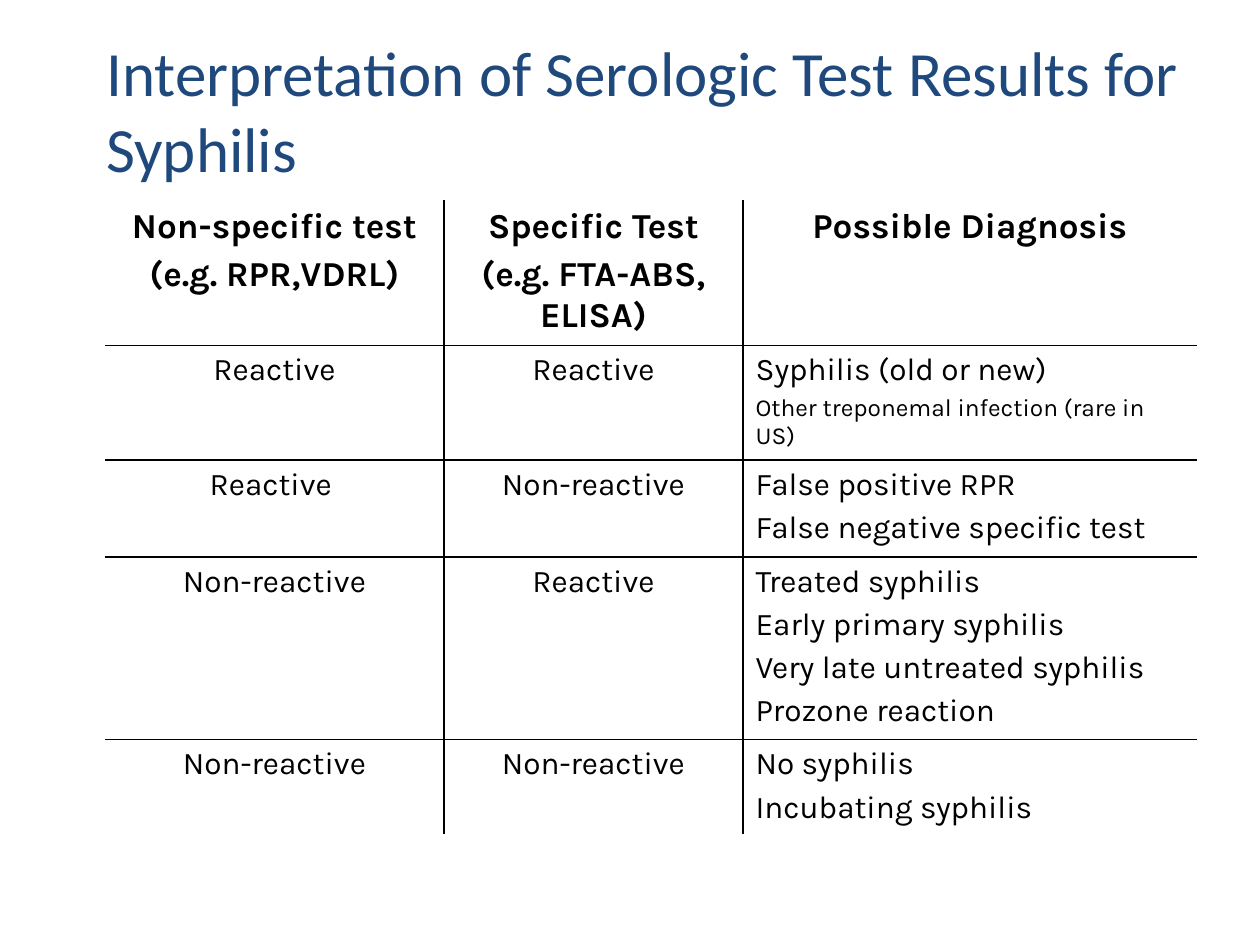
from lxml import etree
from pptx import Presentation
from pptx.dml.color import RGBColor
from pptx.enum.text import MSO_ANCHOR, PP_ALIGN
from pptx.oxml.ns import qn
from pptx.util import Emu, Pt

MIDDLE = MSO_ANCHOR.MIDDLE
LEFT = PP_ALIGN.LEFT
CENTER = PP_ALIGN.CENTER
SCALE = 914400 / 126
COLORS = {"title": "1F497D", "text": "000000", "rule": "000000"}


def px(length):
    return Emu(round(length * SCALE))


def add_border(cell, side, position, visible):
    line = etree.Element(qn(f"a:ln{side}"), w=str(Pt(1)))
    if visible:
        fill = etree.SubElement(line, qn("a:solidFill"))
        etree.SubElement(fill, qn("a:srgbClr"), val=COLORS["rule"])
    else:
        etree.SubElement(line, qn("a:noFill"))
    cell._tc.get_or_add_tcPr().insert(position, line)


prs = Presentation()
prs.slide_width, prs.slide_height = px(1260), px(945)
slide = prs.slides.add_slide(prs.slide_layouts[6])

title = slide.shapes.add_textbox(px(94), px(32), px(1124), px(155)).text_frame
title.word_wrap = True
title.vertical_anchor = MIDDLE
heading = title.paragraphs[0].add_run()
heading.text = "Interpretation of Serologic Test Results for Syphilis"
heading.font.name = "Calibri"
heading.font.size = Pt(36)
heading.font.color.rgb = RGBColor.from_string(COLORS["title"])

results = [
    (["Non-specific test", "(e.g. RPR,VDRL)"],
     ["Specific Test", "(e.g. FTA-ABS, ELISA)"],
     ["Possible Diagnosis"]),
    (["Reactive"], ["Reactive"],
     ["Syphilis (old or new)", "Other treponemal infection (rare in US)"]),
    (["Reactive "], ["Non-reactive"],
     ["False positive RPR", "False negative specific test"]),
    (["Non-reactive"], ["Reactive"],
     ["Treated syphilis", "Early primary syphilis",
      "Very late untreated syphilis", "Prozone reaction"]),
    (["Non-reactive"], ["Non-reactive"],
     ["No syphilis", "Incubating syphilis"]),
]
column_widths = [339, 299, 454]
row_heights = [142, 112, 97, 180, 92]
last_row, last_column = len(row_heights) - 1, len(column_widths) - 1
small_print = "Other treponemal infection (rare in US)"

table = slide.shapes.add_table(
    len(row_heights), len(column_widths), px(105), px(200),
    px(sum(column_widths)), px(sum(row_heights))).table
table.first_row = False
table.horz_banding = False
for column, width in zip(table.columns, column_widths):
    column.width = px(width)
for row, height in zip(table.rows, row_heights):
    row.height = px(height)

for r, result in enumerate(results):
    for c, lines in enumerate(result):
        cell = table.cell(r, c)
        cell.fill.background()
        inner_sides = {"L": c > 0, "R": c < last_column,
                       "T": r > 0, "B": r < last_row}
        for position, (side, visible) in enumerate(inner_sides.items()):
            add_border(cell, side, position, visible)
        for i, line in enumerate(lines):
            frame = cell.text_frame
            paragraph = frame.add_paragraph() if i else frame.paragraphs[0]
            paragraph.alignment = LEFT if r and c == last_column else CENTER
            size = 20 if r == 0 else 14 if line == small_print else 18
            if i:
                paragraph.space_before = Pt(size * 0.2)
            run = paragraph.add_run()
            run.text = line
            run.font.name = "Karla"
            run.font.size = Pt(size)
            run.font.bold = r == 0
            run.font.color.rgb = RGBColor.from_string(COLORS["text"])

prs.save("out.pptx")
